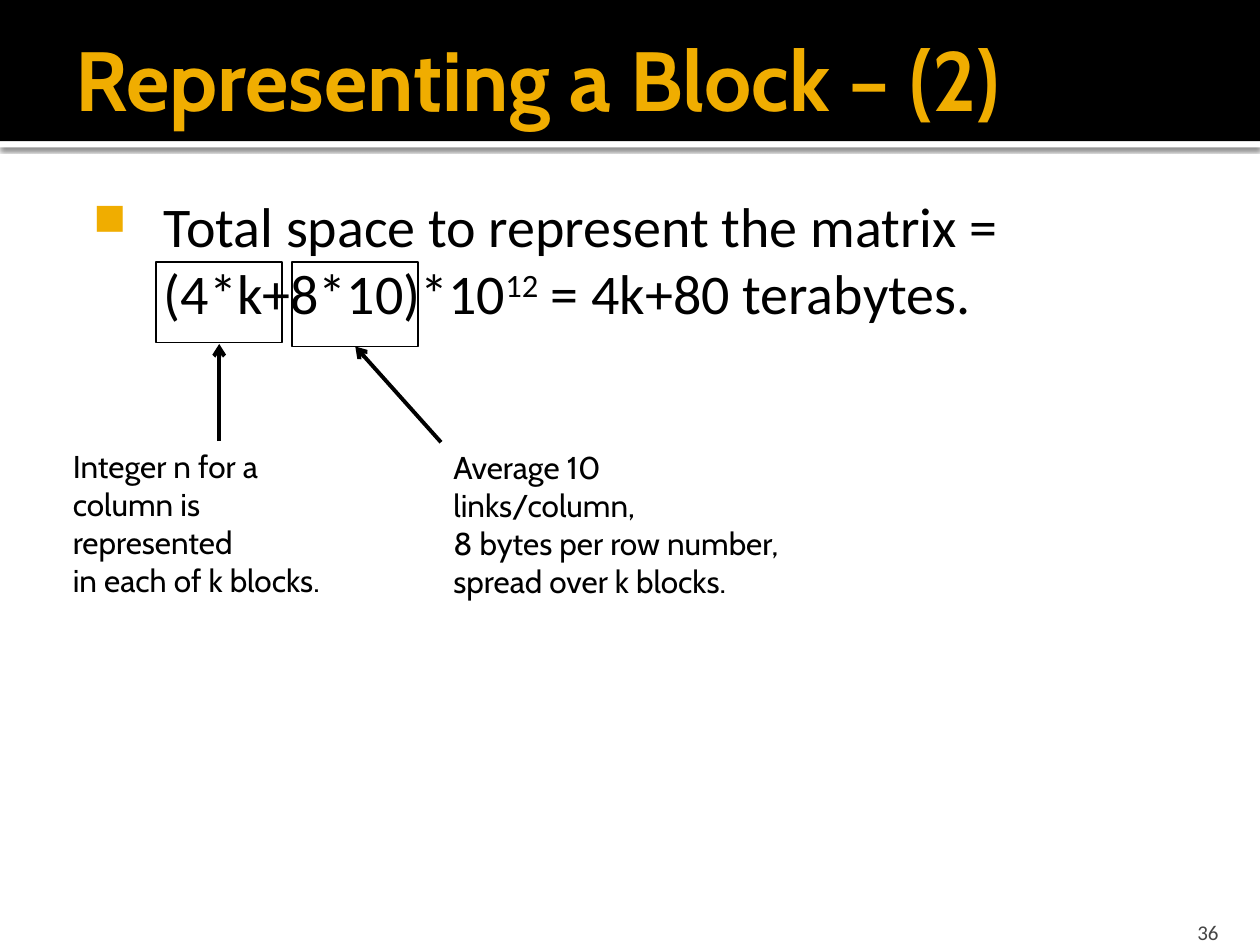
"""Build the slide on the space needed to represent a block matrix."""
from lxml import etree
from pptx import Presentation
from pptx.dml.color import RGBColor
from pptx.enum.shapes import MSO_CONNECTOR, MSO_SHAPE
from pptx.enum.text import MSO_ANCHOR, PP_ALIGN
from pptx.oxml import parse_xml
from pptx.oxml.ns import nsdecls, qn
from pptx.util import Inches, Pt

RECT = MSO_SHAPE.RECTANGLE
LINE = MSO_CONNECTOR.STRAIGHT
TOP, MID, LOW = MSO_ANCHOR.TOP, MSO_ANCHOR.MIDDLE, MSO_ANCHOR.BOTTOM
LEFT, RIGHT = PP_ALIGN.LEFT, PP_ALIGN.RIGHT
HUES = {"gold": "F0AD00", "black": "000000", "white": "FFFFFF", "gray": "454545"}
FORMS = {
    "title": {"size": Pt(48), "name": "Cabin", "bold": True},
    "body": {"size": Pt(32), "name": "Calibri"},
    "note": {"size": Pt(18), "name": "Cabin"},
    "page": {"size": Pt(12), "name": "Calibri"},
}


def add_text(box, lines, form, hue, pads=(0.1, 0.05, 0.1, 0.05), anchor=TOP, align=LEFT):
    frame = slide.shapes.add_textbox(*map(Inches, box)).text_frame
    frame.word_wrap = True
    frame.vertical_anchor = anchor
    for side, pad in zip(("left", "top", "right", "bottom"), pads):
        setattr(frame, f"margin_{side}", Inches(pad))
    for i, runs in enumerate(lines):
        para = frame.paragraphs[0] if i == 0 else frame.add_paragraph()
        para.alignment = align
        for text in runs:
            run = para.add_run()
            run.text = text
            run.font.color.rgb = RGBColor.from_string(HUES[hue])
            for key, value in FORMS[form].items():
                setattr(run.font, key, value)
    return frame.paragraphs[0]


def add_rect(box, fill=None):
    shape = slide.shapes.add_shape(RECT, *map(Inches, box))
    shape.shadow.inherit = False
    if fill:
        shape.fill.solid()
        shape.fill.fore_color.rgb = RGBColor.from_string(HUES[fill])
        shape.line.fill.background()
    else:
        shape.fill.background()
        shape.line.color.rgb = RGBColor.from_string(HUES["black"])
        shape.line.width = Pt(1)
    return shape


prs = Presentation()
prs.slide_width, prs.slide_height = Inches(10), Inches(7.5)
slide = prs.slides.add_slide(prs.slide_layouts[6])

strip = add_rect((0, 1.12, 10, 0.05), "white")
glow = strip._element.spPr.find(qn("a:effectLst"))
glow.append(parse_xml(
    f'<a:outerShdw {nsdecls("a")} blurRad="{Pt(2.5)}" dist="{Pt(0.8)}" dir="5400000">'
    f'<a:srgbClr val="{HUES["black"]}"><a:alpha val="60000"/></a:srgbClr></a:outerShdw>'))
add_rect((0, 0, 10, 1.12), "black")

add_text((0.5, 0.08, 9.5, 1.08), [["Representing a Block – (2)"]], "title", "gold",
         (0.1, 0.05, 0.05, 0.05), MID)

parts = ["Total space to represent the matrix = (4*k+8*10)*10", "12", " = 4k+80 terabytes."]
point = add_text((0.5, 1.42, 9.33, 6.08), [parts], "body", "black", (0.06, 0.1, 0.1, 0.05))
point.runs[1].font._element.set("baseline", "30000")
props = point._p.get_or_add_pPr()
props.set("marL", str(Inches(0.74)))
props.set("indent", str(Inches(-0.56)))
tint = etree.SubElement(props, qn("a:buClr"))
etree.SubElement(tint, qn("a:srgbClr"), val=HUES["gold"])
etree.SubElement(props, qn("a:buSzPct"), val="80000")
etree.SubElement(props, qn("a:buChar"), char="■")

add_text((8.97, 7.2, 0.8, 0.3), [["36"]], "page", "gray", (0.1, 0.05, 0.1, 0), LOW, RIGHT)

notes = [
    ((1.24, 2.08, 1, 0.64), (0.48, 3.5, 2.5, 1.01), (1.74, 3.5, 1.74, 2.73),
     ["Integer n for a", "column is represented", "in each of k blocks."]),
    ((2.32, 2.08, 1, 0.67), (3.5, 3.51, 2.8, 1.01), (3.5, 3.51, 2.82, 2.75),
     ["Average 10 links/column,", "8 bytes per row number,", "spread over k blocks."]),
]
for frame, box, ends, lines in notes:
    add_rect(frame)
    add_text(box, [[line] for line in lines], "note", "black")
    arrow = slide.shapes.add_connector(LINE, *map(Inches, ends))
    arrow.line.color.rgb = RGBColor.from_string(HUES["black"])
    arrow.line.width = Pt(2.25)
    etree.SubElement(arrow.line._get_or_add_ln(), qn("a:tailEnd"), type="arrow")
    etree.SubElement(arrow._element.spPr, qn("a:effectLst"))

prs.save("out.pptx")
